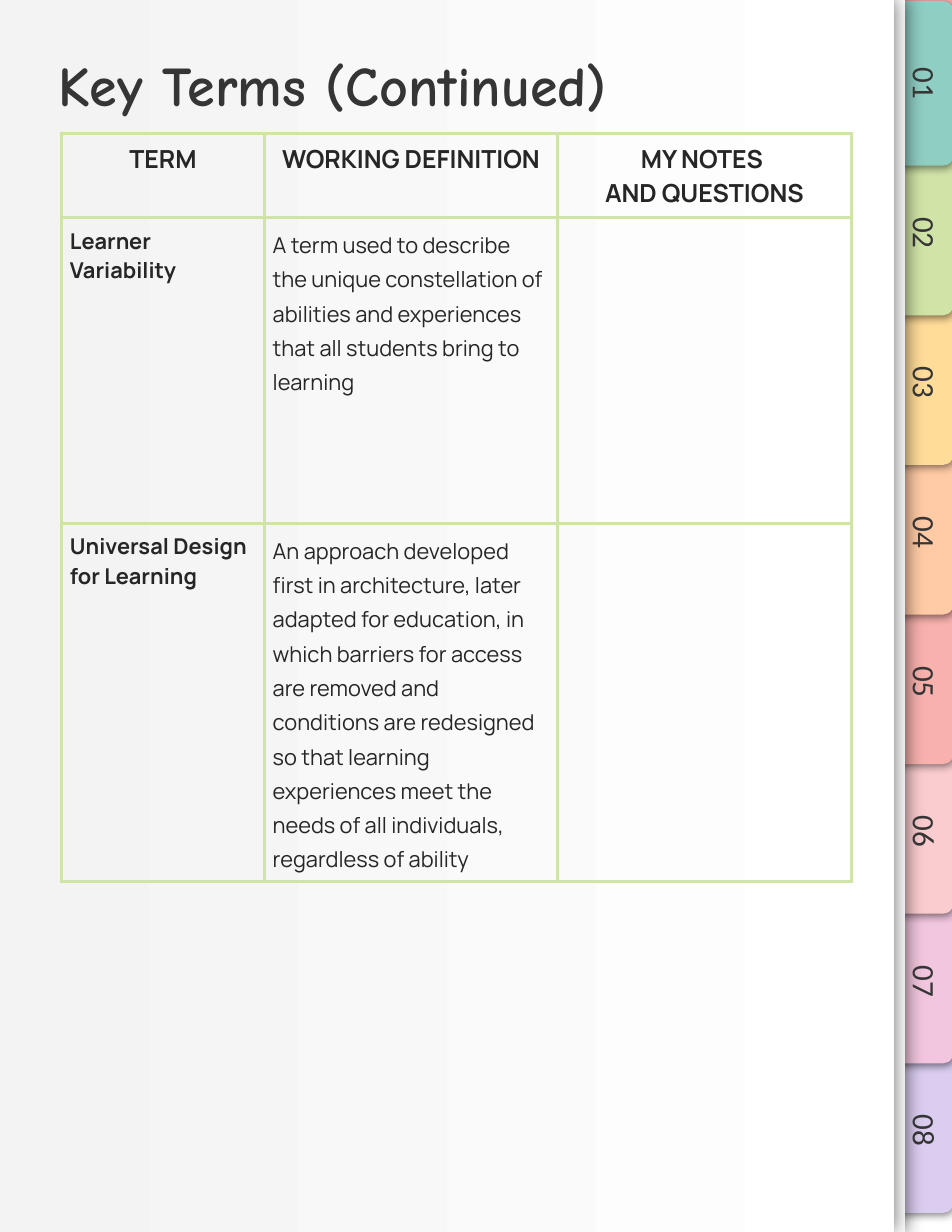
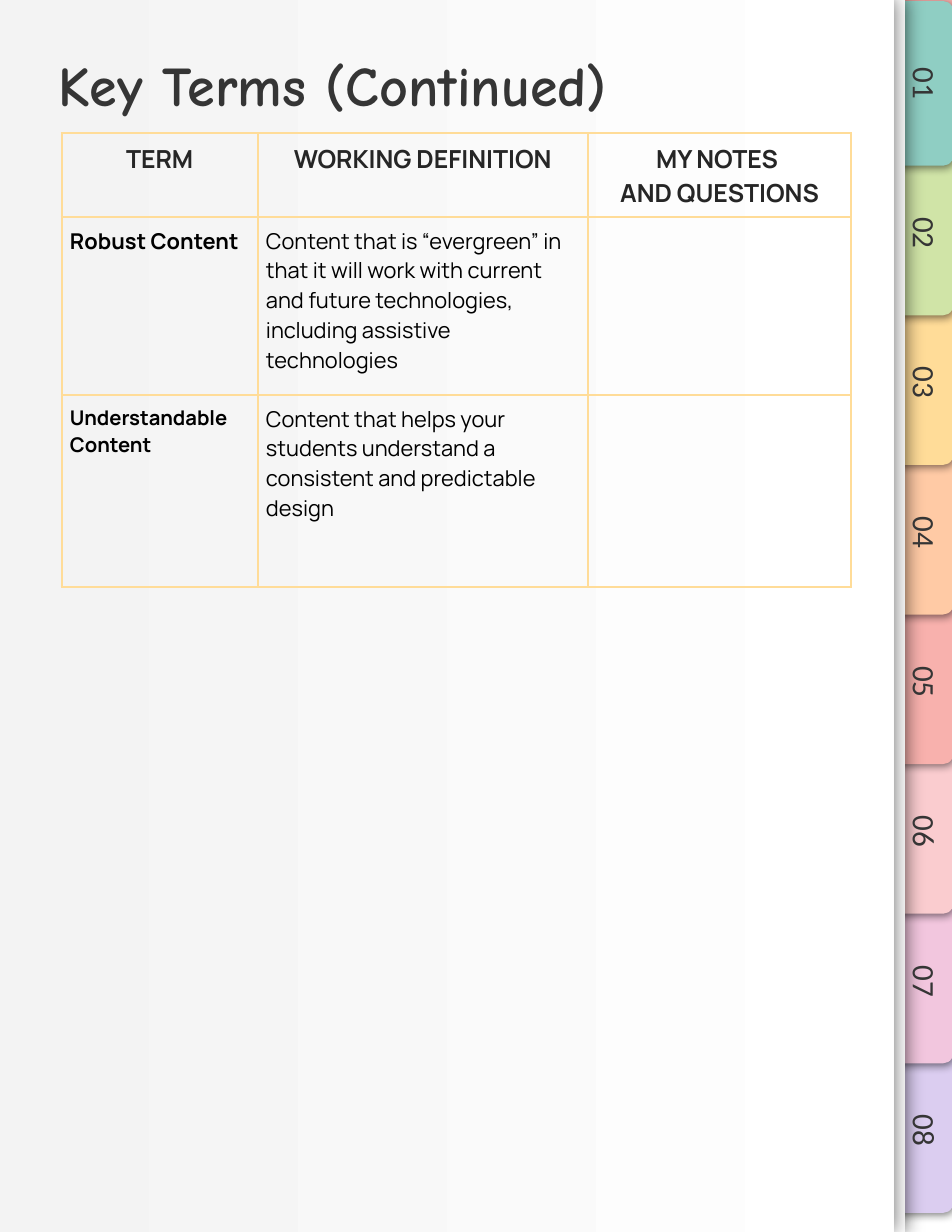
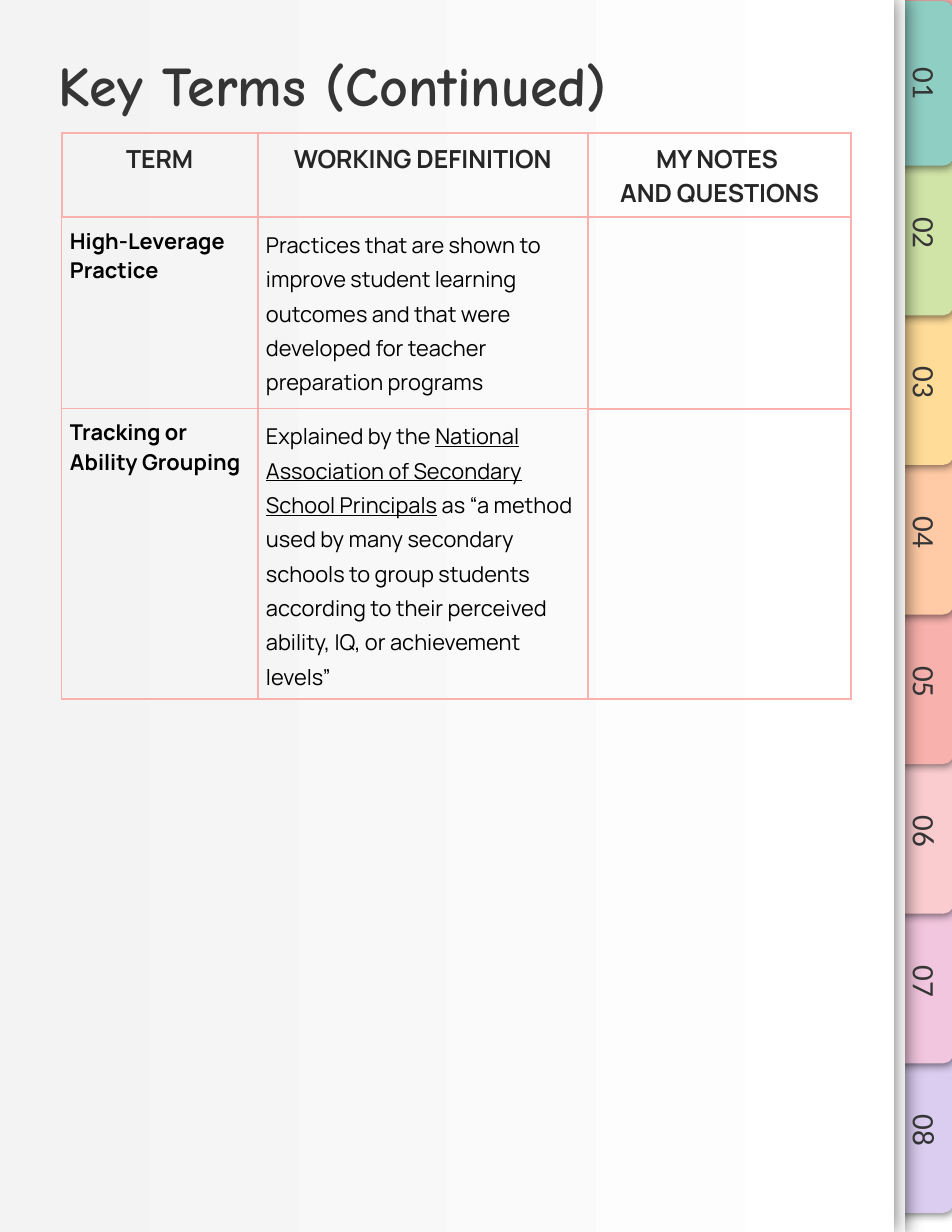
from lxml import etree
from pptx import Presentation, util as u
from pptx.dml.color import RGBColor
from pptx.enum import shapes, text
from pptx.oxml import ns

WIDTH, HEIGHT = 8.5, 11
SHEET_WIDTH = 7.98
WHITE = RGBColor(0xFF, 0xFF, 0xFF)
BLACK = RGBColor(0x00, 0x00, 0x00)
INK = RGBColor(0x26, 0x26, 0x26)
TITLE_INK = RGBColor(0x35, 0x35, 0x35)
SHEET_GREY = RGBColor(0xF3, 0xF3, 0xF3)
LIME = RGBColor(0xD0, 0xE4, 0xA7)
AMBER = RGBColor(0xFF, 0xDC, 0x98)
CORAL = RGBColor(0xF8, 0xB1, 0xAD)
TAB_COLOURS = [
    RGBColor(0x8F, 0xCE, 0xC3), LIME, AMBER, RGBColor(0xFF, 0xCA, 0xA5), CORAL,
    RGBColor(0xFA, 0xCC, 0xCF), RGBColor(0xF2, 0xC6, 0xDE), RGBColor(0xDB, 0xCD, 0xF0),
]
TAB_PITCH = 9.35 / (len(TAB_COLOURS) - 1)
TAB_SHADOW = {"blur": 5.6, "dist": 1.5, "angle": 61}
SHEET_SHADOW = {"blur": 12.4, "dist": 0.8, "angle": 0}
CELL_MARGIN = u.Pt(5.4)
SIDES = ("left", "right", "top", "bottom")

TITLE = "Key Terms (Continued)"
TITLE_FONT = {"name": "Comic Neue", "size": u.Pt(36), "bold": True}
TAB_FONT = {"name": "Calibri", "size": u.Pt(20)}
HEAD_FONT = {"name": "Manrope", "size": u.Pt(16), "bold": True}
TERM_FONT = {"name": "Manrope", "size": u.Pt(14), "bold": True}
SMALL_TERM_FONT = {**TERM_FONT, "size": u.Pt(13)}
BODY_FONT = {"name": "Manrope", "size": u.Pt(14), "bold": False}
LINK_FONT = {**BODY_FONT, "underline": True}

# A cell is a list of paragraphs; a paragraph is a list of (words, font) spans.
HEADINGS = [["TERM"], ["WORKING DEFINITION"], ["MY NOTES ", "AND QUESTIONS"]]
TABLES = [
    {
        "border": LIME, "light": 2.25, "heavy": 2.25, "ink": INK,
        "columns": [1.81, 2.62, 2.62], "rows": [0.75, 2.73, 3.2], "spacing": 1.15,
        "terms": [
            ([[("Learner Variability", TERM_FONT)]],
             [[("A term used to describe the unique constellation of abilities and "
                "experiences that all students bring to learning", BODY_FONT)]]),
            ([[("Universal Design for Learning", TERM_FONT)]],
             [[("An approach developed first in architecture, later adapted for education, "
                "in which barriers for access are removed and conditions are redesigned so "
                "that learning experiences meet the needs of all individuals, regardless of "
                "ability", BODY_FONT)]]),
        ],
    },
    {
        "border": AMBER, "light": 1.5, "heavy": 1.5, "ink": BLACK,
        "columns": [1.75, 2.95, 2.35], "rows": [0.75, 1.59, 1.71], "spacing": None,
        "terms": [
            ([[("Robust Content", TERM_FONT)]],
             [[("Content that is “evergreen” in that it will work with current and future "
                "technologies, including assistive technologies", BODY_FONT)]]),
            ([[("Understandable Content", SMALL_TERM_FONT)]],
             [[("Content that helps your students understand a consistent and predictable "
                "design", BODY_FONT)]]),
        ],
    },
    {
        "border": CORAL, "light": 1, "heavy": 1.5, "ink": BLACK,
        "columns": [1.75, 2.95, 2.35], "rows": [0.75, 1.71, 2.59], "spacing": 1.15,
        "terms": [
            ([[("High-Leverage", TERM_FONT)], [("Practice", TERM_FONT)]],
             [[("Practices that are shown to improve student learning outcomes and that were "
                "developed for teacher preparation programs", BODY_FONT)]]),
            ([[("Tracking or Ability Grouping", TERM_FONT)]],
             [[("Explained by the ", BODY_FONT),
               ("National Association of Secondary School Principals", LINK_FONT),
               (" as “a method used by many secondary schools to group students according to "
                "their perceived ability, IQ, or achievement levels”", BODY_FONT)]]),
        ],
    },
]


def inches(*lengths):
    return [u.Inches(length) for length in lengths]


def write(frame, paragraphs, colour, **para_format):
    for number, spans in enumerate(paragraphs):
        para = frame.add_paragraph() if number else frame.paragraphs[0]
        for name, value in para_format.items():
            setattr(para, name, value)
        for words, font in spans:
            span = para.add_run()
            span.text = words
            span.font.color.rgb = colour
            for name, value in font.items():
                setattr(span.font, name, value)


def add_xml_colour(parent, colour):
    return etree.SubElement(parent, ns.qn("a:srgbClr"), val=str(colour))


def add_shadow(effects, blur, dist, angle, colour=BLACK):
    shadow = etree.SubElement(
        effects, ns.qn("a:outerShdw"), blurRad=str(u.Pt(blur)), dist=str(u.Pt(dist)),
        dir=str(angle * 60000), algn="bl", rotWithShape="0")
    etree.SubElement(add_xml_colour(shadow, colour), ns.qn("a:alpha"), val="50000")


def add_block(page, kind, place, colour, shadow=None):
    shape = page.shapes.add_shape(kind, *inches(*place))
    shape.shadow.inherit = False
    shape.fill.solid()
    shape.fill.fore_color.rgb = colour
    shape.line.fill.background()
    if shadow:
        add_shadow(shape._element.spPr.find(ns.qn("a:effectLst")), **shadow)
    return shape


def add_text(page, place, words, font, anchor=text.MSO_ANCHOR.TOP, rotation=0, **para_format):
    box = page.shapes.add_textbox(*inches(*place))
    box.rotation = rotation
    frame = box.text_frame
    frame.word_wrap = True
    frame.vertical_anchor = anchor
    for side in SIDES:
        setattr(frame, "margin_" + side, u.Inches(0.1))
    write(frame, [[(words, font)]], TITLE_INK, **para_format)
    return frame.paragraphs[0].runs[0]


def add_letter_shadow(span):
    fill = span._r.get_or_add_rPr().find(ns.qn("a:solidFill"))
    effects = etree.Element(ns.qn("a:effectLst"))
    fill.addnext(effects)
    add_shadow(effects, 0, 1, 45, WHITE)


def add_notebook(page):
    """Draw the sheet of paper, the index tabs beside it and the title."""
    page.background.fill.solid()
    page.background.fill.fore_color.rgb = CORAL
    rectangle = shapes.MSO_SHAPE.RECTANGLE
    add_block(page, rectangle, (8.08, 8.58, WIDTH - 8.08, HEIGHT - 8.58), WHITE)
    for number, colour in reversed(list(enumerate(TAB_COLOURS))):
        tab = add_block(page, shapes.MSO_SHAPE.ROUND_2_SAME_RECTANGLE,
                        (7.51, 0.48 + number * TAB_PITCH, 1.47, 0.53), colour, TAB_SHADOW)
        tab.rotation = 90
    for left in (0.1, 0):
        sheet = add_block(page, rectangle, (left, 0, SHEET_WIDTH, HEIGHT), WHITE, SHEET_SHADOW)
    sheet.fill.gradient()
    sheet.fill.gradient_angle = 0
    for stop, colour in zip(sheet.fill.gradient_stops, (SHEET_GREY, WHITE)):
        stop.color.rgb = colour
    for number in range(len(TAB_COLOURS)):
        label = add_text(page, (7.59, 0.43 + number * TAB_PITCH, 1.44, 0.63),
                         f"{number + 1:02}", TAB_FONT, text.MSO_ANCHOR.BOTTOM, 90,
                         alignment=text.PP_ALIGN.CENTER)
        add_letter_shadow(label)
    add_text(page, (0.42, 0.35, 7.12, 0.63), TITLE, TITLE_FONT)


def add_borders(cell, colour, widths):
    properties = cell._tc.get_or_add_tcPr()
    for side, width in widths.items():
        line = etree.SubElement(properties, ns.qn("a:ln" + side), w=str(u.Pt(width)))
        add_xml_colour(etree.SubElement(line, ns.qn("a:solidFill")), colour)


def add_terms(page, design):
    columns, rows = design["columns"], design["rows"]
    place = inches(0.55, 1.19, sum(columns), sum(rows))
    table = page.shapes.add_table(len(rows), len(columns), *place).table
    table.first_row = table.horz_banding = False
    for column, width in zip(table.columns, columns):
        column.width = u.Inches(width)
    for row, height in zip(table.rows, rows):
        row.height = u.Inches(height)

    for row in range(len(rows)):
        for column in range(len(columns)):
            cell = table.cell(row, column)
            for side in SIDES:
                setattr(cell, "margin_" + side, CELL_MARGIN)
            header, notes = row == 0, column == len(columns) - 1
            heavy_sides = {"L": header or column > 0, "R": True,
                           "T": row < 2 or notes, "B": header or notes}
            add_borders(cell, design["border"], {
                side: design["heavy" if heavy else "light"]
                for side, heavy in heavy_sides.items()})
            cell.fill.background()
            if header:
                write(cell.text_frame, [[(line, HEAD_FONT)] for line in HEADINGS[column]], INK,
                      alignment=text.PP_ALIGN.CENTER)
            elif not notes:
                write(cell.text_frame, design["terms"][row - 1][column], design["ink"],
                      line_spacing=design["spacing"] if column else None)


def main():
    deck = Presentation()
    deck.slide_width, deck.slide_height = inches(WIDTH, HEIGHT)
    for design in TABLES:
        page = deck.slides.add_slide(deck.slide_layouts[6])
        add_notebook(page)
        add_terms(page, design)
    deck.save("out.pptx")


if __name__ == "__main__":
    main()
